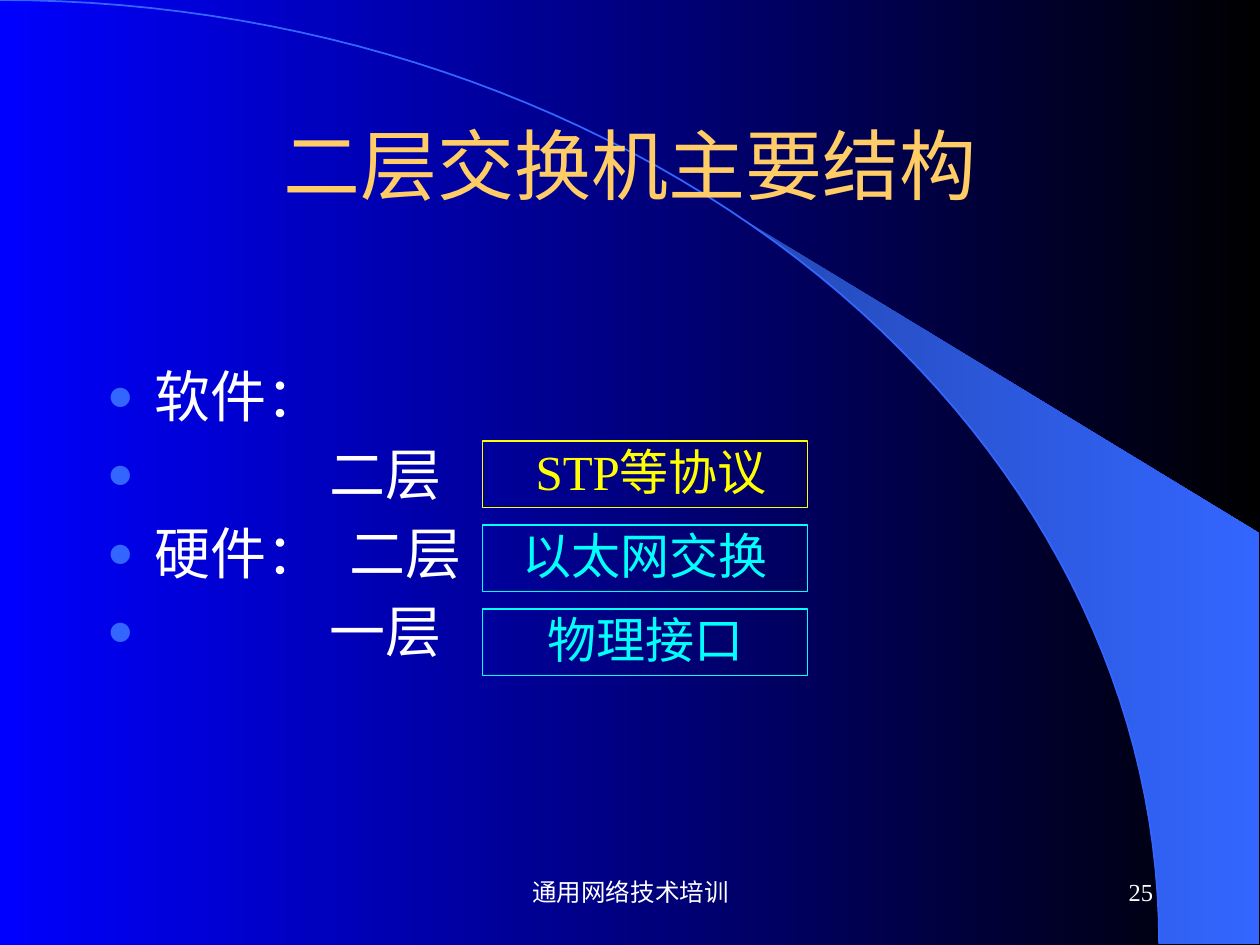
from math import asin, cos, pi, sin

from lxml.etree import SubElement
from pptx import Presentation
from pptx.dml.color import RGBColor as Rgb
from pptx.enum.shapes import MSO_SHAPE as Shp
from pptx.enum.text import MSO_ANCHOR as Anchor, PP_ALIGN as Align
from pptx.oxml.ns import qn
from pptx.util import Inches, Pt

HUES = {
    "blue": "0000FF", "black": "000000", "arc": "3366FF", "deep": "2449B6",
    "gold": "FFCC66", "white": "FFFFFF", "yellow": "FFFF00", "cyan": "00FFFF",
}
SERIF = "Times New Roman"


def hue(name):
    """Return the named colour."""
    return Rgb.from_string(HUES[name])


def blend(fill, first, last):
    """Fill with a gradient running from left to right."""
    fill.gradient()
    fill.gradient_angle = 0
    for stop, name, pos in zip(fill.gradient_stops, (first, last), (0, 1)):
        stop.color.rgb = hue(name)
        stop.position = pos


def curve(start, steps=60):
    """List points on the quarter ellipse, from a start angle to its foot."""
    turns = [start + (pi / 2 - start) * i / steps for i in range(steps + 1)]
    return [(9.2 * sin(t), 7.49 * (1 - cos(t))) for t in turns]


def trace(slide, points, close):
    """Draw a freeform through points given in inches."""
    spots = [(Inches(x), Inches(y)) for x, y in points]
    pen = slide.shapes.build_freeform(*spots[0], scale=1.0)
    pen.add_line_segments(spots[1:], close=close)
    form = pen.convert_to_shape()
    form.shadow.inherit = False
    return form


def add_arc(slide):
    """Draw the shaded wedge and the thin arc."""
    wedge = trace(slide, curve(asin(0.64)) + [(9.99, 7.49), (9.99, 4.23)], True)
    blend(wedge.fill, "deep", "arc")
    wedge.line.fill.background()
    arc = trace(slide, curve(0), False)
    arc.fill.background()
    arc.line.color.rgb = hue("arc")
    arc.line.width = Pt(1)


def style(par, size, name, face=SERIF, align=Align.CENTER):
    """Set the font and alignment of a paragraph."""
    par.alignment = align
    par.font.size = Pt(size)
    par.font.name = face
    par.font.color.rgb = hue(name)


def add_text(slide, box, text, *look):
    """Add a one-line text box centred in height."""
    frame = slide.shapes.add_textbox(*map(Inches, box)).text_frame
    frame.word_wrap = True
    frame.vertical_anchor = Anchor.MIDDLE
    frame.text = text
    style(frame.paragraphs[0], *look)


def add_dot(par, inset):
    """Hang a round bullet at the left edge, with the text at the inset."""
    props = par._p.get_or_add_pPr()
    props.set("marL", str(Inches(inset)))
    props.set("indent", str(-Inches(inset)))
    tint = SubElement(props, qn("a:buClr"))
    SubElement(tint, qn("a:srgbClr")).set("val", HUES["arc"])
    SubElement(props, qn("a:buSzPct")).set("val", "80000")
    SubElement(props, qn("a:buFont")).set("typeface", SERIF)
    SubElement(props, qn("a:buChar")).set("char", "●")


def add_list(slide, rows):
    """Add the bulleted list, with a wide gap between the parts of a row."""
    box = slide.shapes.add_textbox(*map(Inches, (0.75, 2.82, 8.5, 3.85)))
    frame = box.text_frame
    frame.word_wrap = True
    for i, (inset, parts) in enumerate(rows):
        par = frame.add_paragraph() if i else frame.paragraphs[0]
        style(par, 32, "white", align=Align.LEFT)
        par.space_before = Pt(6.4 if i else 0)
        add_dot(par, inset)
        for j, part in enumerate(parts):
            if j:
                gap = par.add_run()
                gap.text = " "
                gap.font._element.set("spc", "800")
            par.add_run().text = part


def add_box(slide, top, text, name):
    """Add an outlined box with centred text."""
    box = slide.shapes.add_shape(
        Shp.RECTANGLE, *map(Inches, (3.83, top, 2.58, 0.53)))
    box.shadow.inherit = False
    box.fill.background()
    box.line.color.rgb = hue(name)
    box.line.width = Pt(0.75)
    frame = box.text_frame
    frame.word_wrap = True
    frame.vertical_anchor = Anchor.MIDDLE
    frame.text = text
    par = frame.paragraphs[0]
    style(par, 28, name)
    par.line_spacing = 0.9


def main():
    """Build the slide and save it."""
    deck = Presentation()
    deck.slide_width, deck.slide_height = Inches(10), Inches(7.5)
    slide = deck.slides.add_slide(deck.slide_layouts[6])
    blend(slide.background.fill, "blue", "black")
    add_arc(slide)
    add_text(slide, (3.42, 6.83, 3.17, 0.5), "通用网络技术培训", 14, "white")
    add_text(slide, (7.17, 6.83, 2.08, 0.5), "25", 14, "white", SERIF, Align.RIGHT)
    add_text(slide, (0.75, 0.67, 8.5, 1.25), "二层交换机主要结构", 44, "gold", "Arial")
    add_list(slide, [
        (0.38, ["软件："]),
        (1.77, ["二层"]),
        (0.38, ["硬件：", "二层"]),
        (1.77, ["一层"]),
    ])
    boxes = [(" STP等协议", "yellow"), ("以太网交换", "cyan"), ("物理接口", "cyan")]
    for i, (text, name) in enumerate(boxes):
        add_box(slide, 3.5 + i * 2 / 3, text, name)
    deck.save("out.pptx")


if __name__ == "__main__":
    main()
